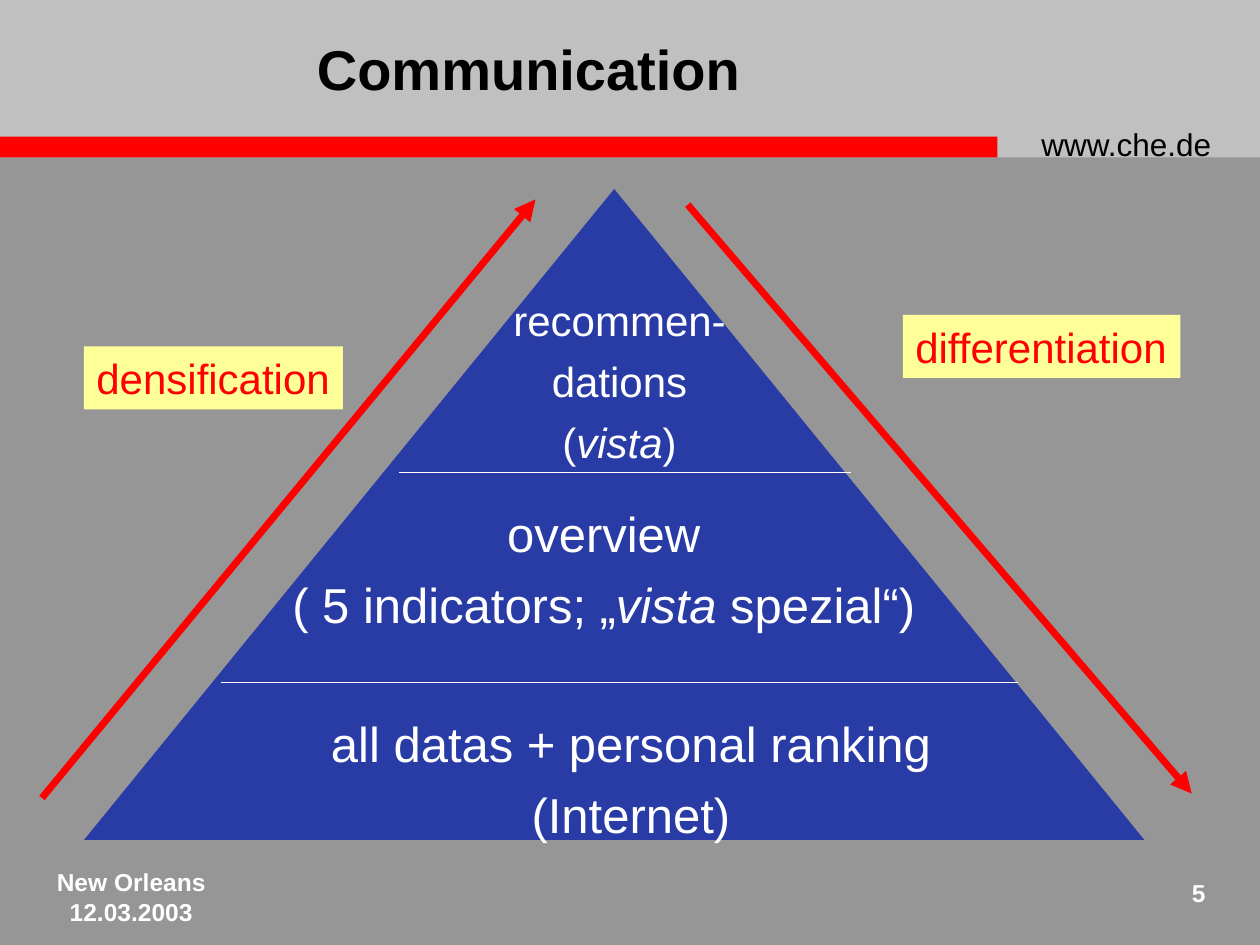
"""Build the Communication slide: a three-level pyramid between two arrows."""
from lxml.etree import SubElement
from pptx import Presentation
from pptx.dml.color import RGBColor
from pptx.enum.shapes import MSO_CONNECTOR as Connector, MSO_SHAPE as Shape
from pptx.enum.text import MSO_ANCHOR as Anchor, PP_ALIGN as Align
from pptx.oxml.ns import qn
from pptx.util import Pt

FONT = "Arial"
BACKGROUND = RGBColor(0x96, 0x96, 0x96)
BANNER = RGBColor(0xC0, 0xC0, 0xC0)
RED = RGBColor(0xFF, 0x00, 0x00)
BLUE = RGBColor(0x29, 0x3B, 0xA5)
YELLOW = RGBColor(0xFF, 0xFF, 0x99)
WHITE = RGBColor(0xFF, 0xFF, 0xFF)
BLACK = RGBColor(0x00, 0x00, 0x00)


def write_lines(shape, lines, size, color, align=Align.LEFT, bold=False, gap=0, anchor=Anchor.TOP, wrap=True):
    """Write one paragraph per line; a line is a list of runs, every second one italic."""
    frame = shape.text_frame
    frame.word_wrap = wrap
    frame.vertical_anchor = anchor
    for index, runs in enumerate(lines):
        paragraph = frame.add_paragraph() if index else frame.paragraphs[0]
        paragraph.alignment = align
        paragraph.space_before = Pt(gap if index else 0)
        font = paragraph.font
        font.name, font.size, font.bold = FONT, Pt(size), bold
        font.color.rgb = color
        for position, text in enumerate(runs):
            run = paragraph.add_run()
            run.text = text
            if position % 2:
                run.font.italic = True


def add_text(slide, box, lines, size, color, **style):
    """Add a text box."""
    shape = slide.shapes.add_textbox(*map(Pt, box))
    write_lines(shape, lines, size, color, **style)


def add_block(slide, kind, box, color):
    """Add a filled shape without outline or shadow."""
    shape = slide.shapes.add_shape(kind, *map(Pt, box))
    shape.shadow.inherit = False
    shape.fill.solid()
    shape.fill.fore_color.rgb = color
    shape.line.fill.background()
    return shape


def add_label(slide, box, text):
    """Add a yellow label with red text."""
    shape = add_block(slide, Shape.RECTANGLE, box, YELLOW)
    write_lines(shape, [[text]], 24, RED, anchor=Anchor.MIDDLE, wrap=False)


def add_line(slide, ends, color, width, arrow=False):
    """Add a straight line, with an arrowhead at its end if wanted."""
    line = slide.shapes.add_connector(Connector.STRAIGHT, *map(Pt, ends))
    line.line.color.rgb = color
    line.line.width = Pt(width)
    if arrow:
        SubElement(line.line._get_or_add_ln(), qn("a:tailEnd"), type="triangle")
    SubElement(line._element.spPr, qn("a:effectLst"))


def add_frame(slide):
    """Add the banner, title, address and footer."""
    add_block(slide, Shape.RECTANGLE, (0, 0, 720, 90), BANNER)
    add_block(slide, Shape.RECTANGLE, (0, 78, 570, 12), RED)
    add_text(slide, (588, 68, 126, 29), [["www.che.de"]], 18, BLACK)
    add_text(slide, (0, 492, 150, 36), [["New Orleans"], ["12.03.2003"]], 14, WHITE,
             align=Align.CENTER, bold=True)
    add_text(slide, (654, 498, 42, 30), [["5"]], 14, WHITE, align=Align.RIGHT, bold=True)
    add_text(slide, (174, 0, 408, 78), [["Communication"]], 32, BLACK, bold=True, anchor=Anchor.MIDDLE)


def add_pyramid(slide):
    """Add the pyramid with its three levels of text."""
    add_block(slide, Shape.ISOSCELES_TRIANGLE, (48, 108, 606, 372), BLUE)
    levels = [
        ((180, 165, 348, 102), 24, [["recommen-"], ["dations"], ["(", "vista", ")"]]),
        ((42, 284, 606, 80), 28, [["overview"], ["( 5 indicators; „", "vista", " spezial“)"]]),
        ((30, 404, 661, 80), 28, [["all datas + personal ranking"], ["(Internet)"]]),
    ]
    for box, size, lines in levels:
        add_text(slide, box, lines, size, WHITE, align=Align.CENTER, gap=size / 4)
    for left, right, y in [(228, 486, 270), (126, 582, 390)]:
        add_line(slide, (left, y, right, y), WHITE, 0.75)


def main():
    """Build and save the slide."""
    presentation = Presentation()
    presentation.slide_width, presentation.slide_height = Pt(720), Pt(540)
    slide = presentation.slides.add_slide(presentation.slide_layouts[6])
    slide.background.fill.solid()
    slide.background.fill.fore_color.rgb = BACKGROUND
    add_frame(slide)
    add_pyramid(slide)
    add_label(slide, (48, 198, 148, 36), "densification")
    add_label(slide, (516, 180, 158.5, 36), "differentiation")
    add_line(slide, (24, 456, 306, 114), RED, 4, arrow=True)
    add_line(slide, (393, 117, 681, 453.5), RED, 4, arrow=True)
    presentation.save("out.pptx")


if __name__ == "__main__":
    main()
